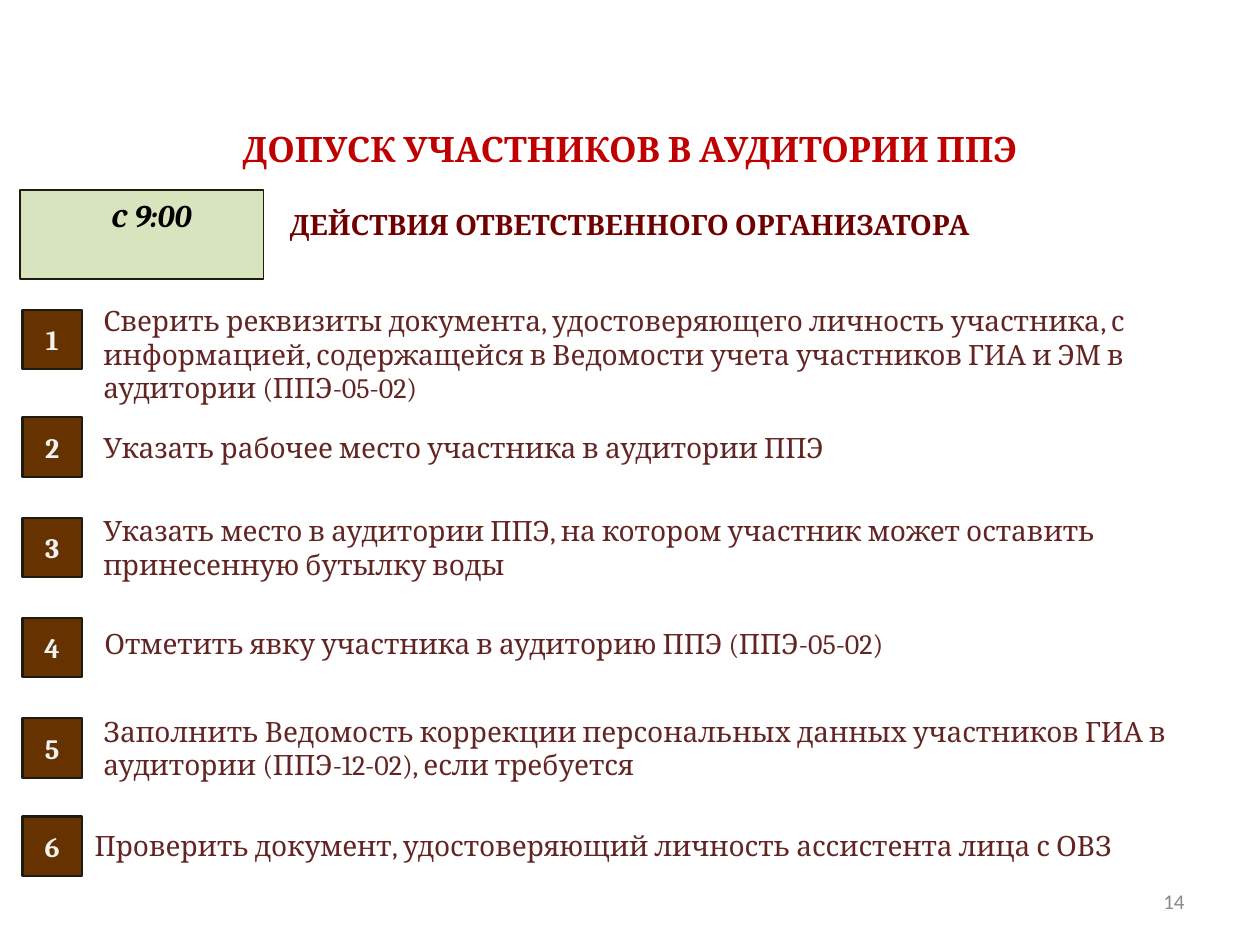
from pptx import Presentation
from pptx.dml.color import RGBColor
from pptx.enum.shapes import MSO_SHAPE
from pptx.enum.text import MSO_ANCHOR, MSO_AUTO_SIZE, PP_ALIGN
from pptx.util import Pt

RED = RGBColor(0xC0, 0x00, 0x00)
MAROON = RGBColor(0x70, 0x00, 0x00)
WINE = RGBColor(0x63, 0x25, 0x23)
BROWN = RGBColor(0x66, 0x33, 0x00)
GREEN = RGBColor(0xD7, 0xE4, 0xBD)
OUTLINE = RGBColor(0x1E, 0x1C, 0x11)
PALE = RGBColor(0xF2, 0xF2, 0xF2)
GREY = RGBColor(0x89, 0x89, 0x89)
BLACK = RGBColor(0x00, 0x00, 0x00)

HEADING = {"name": "Cambria", "size": Pt(20), "bold": True}
SUBHEADING = {"name": "Cambria", "size": Pt(16), "bold": True}
STEP = {"name": "Cambria", "size": Pt(16)}
TIME = {"name": "Cambria", "size": Pt(18), "bold": True, "italic": True}
PAGE = {"name": "Calibri", "size": Pt(12)}


def write(shape, text, style, color, align=PP_ALIGN.LEFT, anchor=MSO_ANCHOR.MIDDLE):
    frame = shape.text_frame
    frame.word_wrap = True
    frame.auto_size = MSO_AUTO_SIZE.NONE
    frame.vertical_anchor = anchor
    paragraph = frame.paragraphs[0]
    paragraph.alignment = align
    run = paragraph.add_run()
    run.text = text
    for key, value in style.items():
        setattr(run.font, key, value)
    run.font.color.rgb = color


def add_box(left, top, width, height, fill, line_width):
    box = slide.shapes.add_shape(MSO_SHAPE.RECTANGLE, Pt(left), Pt(top), Pt(width), Pt(height))
    box.shadow.inherit = False
    box.fill.solid()
    box.fill.fore_color.rgb = fill
    box.line.color.rgb = OUTLINE
    box.line.width = Pt(line_width)
    return box


prs = Presentation()
prs.slide_width, prs.slide_height = Pt(720), Pt(540)
slide = prs.slides.add_slide(prs.slide_layouts[5])

heading = slide.shapes.title
heading.left, heading.top, heading.width, heading.height = Pt(0), Pt(69), Pt(720), Pt(32)
write(heading, "ДОПУСК УЧАСТНИКОВ В АУДИТОРИИ ППЭ", HEADING, RED, PP_ALIGN.CENTER)

actions = slide.shapes.add_textbox(Pt(0), Pt(101), Pt(720), Pt(54))
write(actions, "ДЕЙСТВИЯ ОТВЕТСТВЕННОГО ОРГАНИЗАТОРА", SUBHEADING, MAROON, PP_ALIGN.CENTER)

start_time = add_box(11.5, 108.5, 139, 51, GREEN, 0.75)
start_time.text_frame.margin_left = Pt(52)
write(start_time, "с 9:00", TIME, BLACK, anchor=MSO_ANCHOR.TOP)

steps = [
    (177, 52, 177, 50.4, "Сверить реквизиты документа, удостоверяющего личность участника, с "
     "информацией, содержащейся в Ведомости учета участников ГИА и ЭМ в аудитории (ППЭ-05-02)"),
    (238.5, 52, 238.5, 34, "Указать рабочее место участника в аудитории ППЭ"),
    (295.8, 52, 295.8, 34, "Указать место в аудитории ППЭ, на котором участник может оставить "
     "принесенную бутылку воды"),
    (353, 52.6, 350.6, 34, "Отметить явку участника в аудиторию ППЭ (ППЭ-05-02)"),
    (410.4, 52, 410.4, 34, "Заполнить Ведомость коррекции персональных данных участников ГИА в "
     "аудитории (ППЭ-12-02), если требуется"),
    (466.6, 47, 466, 34, "Проверить документ, удостоверяющий личность ассистента лица с ОВЗ"),
]
for number, (box_top, left, top, height, text) in enumerate(steps, 1):
    step = slide.shapes.add_textbox(Pt(left), Pt(top), Pt(659.5), Pt(height))
    write(step, text, STEP, WINE)
    badge = add_box(12.8, box_top, 34, 34, BROWN, 1.25)
    write(badge, str(number), SUBHEADING, PALE, PP_ALIGN.CENTER)

page_number = slide.shapes.add_textbox(Pt(516), Pt(500.5), Pt(168), Pt(28.8))
write(page_number, "14", PAGE, GREY, PP_ALIGN.RIGHT)

prs.save("out.pptx")
